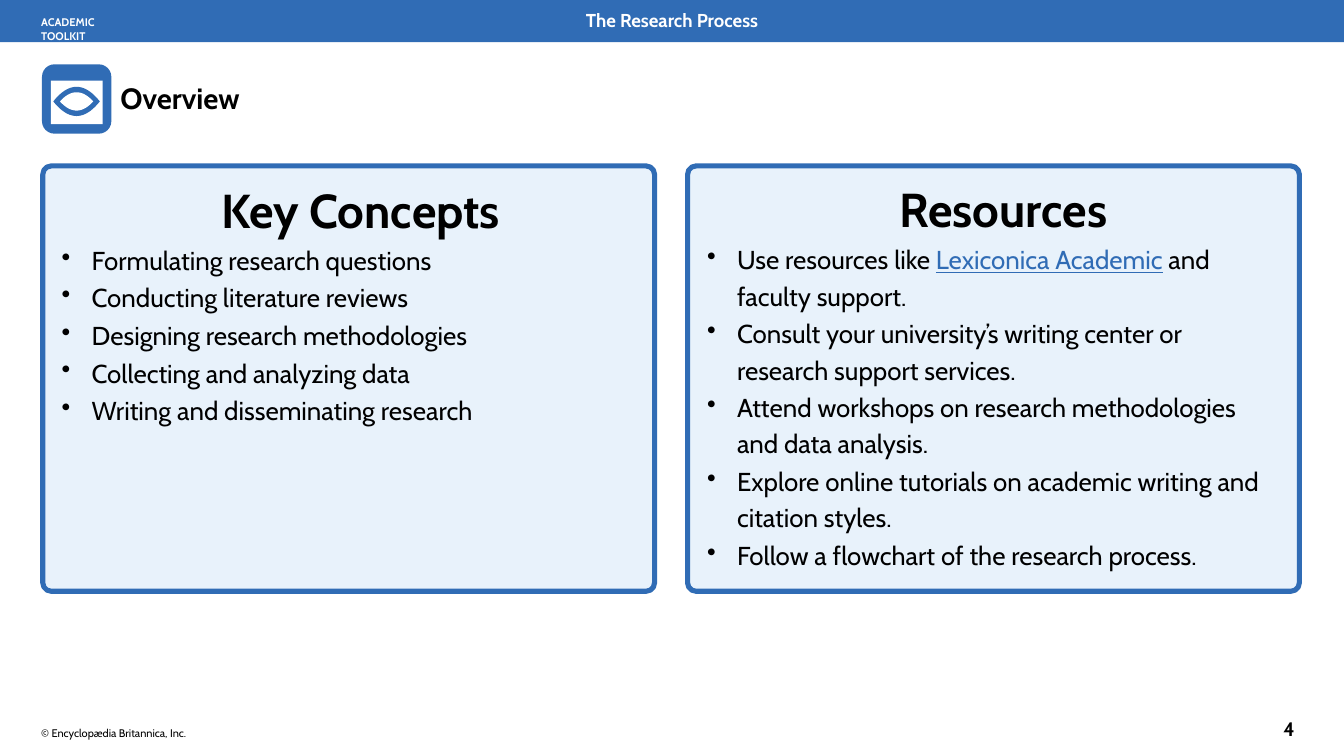
from lxml.etree import SubElement
from pptx import Presentation
from pptx.dml.color import RGBColor
from pptx.enum.shapes import MSO_SHAPE as Shape
from pptx.enum.text import MSO_ANCHOR as Anchor, MSO_AUTO_SIZE as AutoSize, PP_ALIGN as Align
from pptx.oxml.ns import qn
from pptx.util import Pt

BLUE = RGBColor(0x30, 0x6C, 0xB5)
PALE_BLUE = RGBColor(0xE8, 0xF2, 0xFB)
WHITE = RGBColor(0xFF, 0xFF, 0xFF)
BLACK = RGBColor(0x00, 0x00, 0x00)
FONT = "Cabin"

presentation = Presentation()
presentation.slide_width = Pt(1583.28)
presentation.slide_height = Pt(890.64)
slide = presentation.slides.add_slide(presentation.slide_layouts[5])
shapes = slide.shapes


def write(paragraph, text, size=30.5, color=BLACK, bold=False, underline=False):
    run = paragraph.add_run()
    run.text = text
    font = run.font
    font.name = FONT
    font.size = Pt(size)
    font.bold = bold
    font.underline = underline
    font.color.rgb = color


def prepare_frame(shape, top_inset):
    """Set wrapping and insets, and return the text frame."""
    frame = shape.text_frame
    frame.word_wrap = True
    frame.auto_size = AutoSize.NONE
    frame.vertical_anchor = Anchor.TOP
    frame.margin_left = frame.margin_right = frame.margin_bottom = 0
    frame.margin_top = Pt(top_inset)
    return frame


# Header band, panels and icon frame
blocks = [
    (Shape.RECTANGLE, 0, 0, 1583.28, 49.7, BLUE, None, 0),
    (Shape.ROUNDED_RECTANGLE, 50.4, 195.5, 720.7, 501.1, PALE_BLUE, BLUE, 0.02),
    (Shape.ROUNDED_RECTANGLE, 810, 195.5, 720.7, 501.1, PALE_BLUE, BLUE, 0.02),
    (Shape.ROUNDED_RECTANGLE, 49.5, 75.8, 81.7, 81.7, BLUE, None, 0.18),
    (Shape.RECTANGLE, 59.8, 95, 61.2, 51.2, WHITE, None, 0),
]
for kind, left, top, width, height, fill, line, radius in blocks:
    block = shapes.add_shape(kind, Pt(left), Pt(top), Pt(width), Pt(height))
    block.shadow.inherit = False
    block.fill.solid()
    block.fill.fore_color.rgb = fill
    if line is None:
        block.line.fill.background()
    else:
        block.line.color.rgb = line
        block.line.width = Pt(6)
    if radius:
        block.adjustments[0] = radius

# Eye icon: two lenses, each bounded by a pair of parabolas
EYE_X, EYE_Y = 90.2, 119.5
STEPS = 10
for half_width, half_height, color in [(27.4, 17.2, BLUE), (19.6, 10.8, WHITE)]:
    offsets = [step / STEPS for step in range(-STEPS, STEPS + 1)]
    upper = [(u, u * u - 1) for u in offsets]
    lower = [(u, 1 - u * u) for u in reversed(offsets)]
    points = [(Pt(EYE_X + u * half_width), Pt(EYE_Y + v * half_height)) for u, v in upper + lower]
    builder = shapes.build_freeform(*points[0])
    builder.add_line_segments(points[1:], close=True)
    lens = builder.convert_to_shape()
    lens.shadow.inherit = False
    lens.fill.solid()
    lens.fill.fore_color.rgb = color
    lens.line.fill.background()

# Slide title
title = shapes.title
title.left, title.top, title.width, title.height = Pt(141.8), Pt(93.6), Pt(211), Pt(44)
title_paragraph = prepare_frame(title, 1.4).paragraphs[0]
title_paragraph.alignment = Align.LEFT
write(title_paragraph, "Overview", size=34.5, bold=True)

# Header and footer labels
labels = [
    ("The Research Process", 539.6, 9.4, 504, 28, 22, WHITE, True, Align.CENTER),
    ("ACADEMIC TOOLKIT", 48.5, 17.3, 117.4, 18, 13, WHITE, True, Align.LEFT),
    ("4", 1512, 843.8, 26.6, 29.5, 23, BLACK, True, Align.LEFT),
    ("© Encyclopædia Britannica, Inc.", 48.5, 853.9, 185, 18, 13, BLACK, False, Align.LEFT),
]
for text, left, top, width, height, size, color, bold, alignment in labels:
    label = shapes.add_textbox(Pt(left), Pt(top), Pt(width), Pt(height))
    paragraph = prepare_frame(label, 1.4).paragraphs[0]
    paragraph.alignment = alignment
    write(paragraph, text, size=size, color=color, bold=bold)

# Panel texts; a bullet is a list of runs, every second one styled as a link
panels = [
    ("Key Concepts", 71.3, 198, 704.9, 305.3, 2.2, [
        ["Formulating research questions"],
        ["Conducting literature reviews"],
        ["Designing research methodologies"],
        ["Collecting and analyzing data"],
        ["Writing and disseminating research"],
    ]),
    ("Resources", 831.6, 197.3, 673.9, 478, 27.4, [
        ["Use resources like ", "Lexiconica Academic", " and faculty support."],
        ["Consult your university’s writing center or research support services."],
        ["Attend workshops on research methodologies and data analysis."],
        ["Explore online tutorials on academic writing and citation styles."],
        ["Follow a flowchart of the research process."],
    ]),
]
for heading, left, top, width, height, heading_indent, bullets in panels:
    box = shapes.add_textbox(Pt(left), Pt(top), Pt(width), Pt(height))
    frame = prepare_frame(box, 15.1)
    paragraph = frame.paragraphs[0]
    paragraph.alignment = Align.CENTER
    paragraph._p.get_or_add_pPr().set("marL", str(Pt(heading_indent)))
    write(paragraph, heading, size=56, bold=True)
    for runs in bullets:
        paragraph = frame.add_paragraph()
        properties = paragraph._p.get_or_add_pPr()
        properties.set("marL", str(Pt(36.7)))
        properties.set("indent", str(Pt(-35.3)))
        bullet_color = SubElement(properties, qn("a:buClr"))
        SubElement(bullet_color, qn("a:srgbClr"), val=str(BLACK))
        SubElement(properties, qn("a:buChar"), char="•")
        paragraph.line_spacing = 1.17
        paragraph.space_before = Pt(1.5)
        for index, text in enumerate(runs):
            is_link = index % 2 == 1
            write(paragraph, text, color=BLUE if is_link else BLACK, underline=is_link)

presentation.save("out.pptx")
